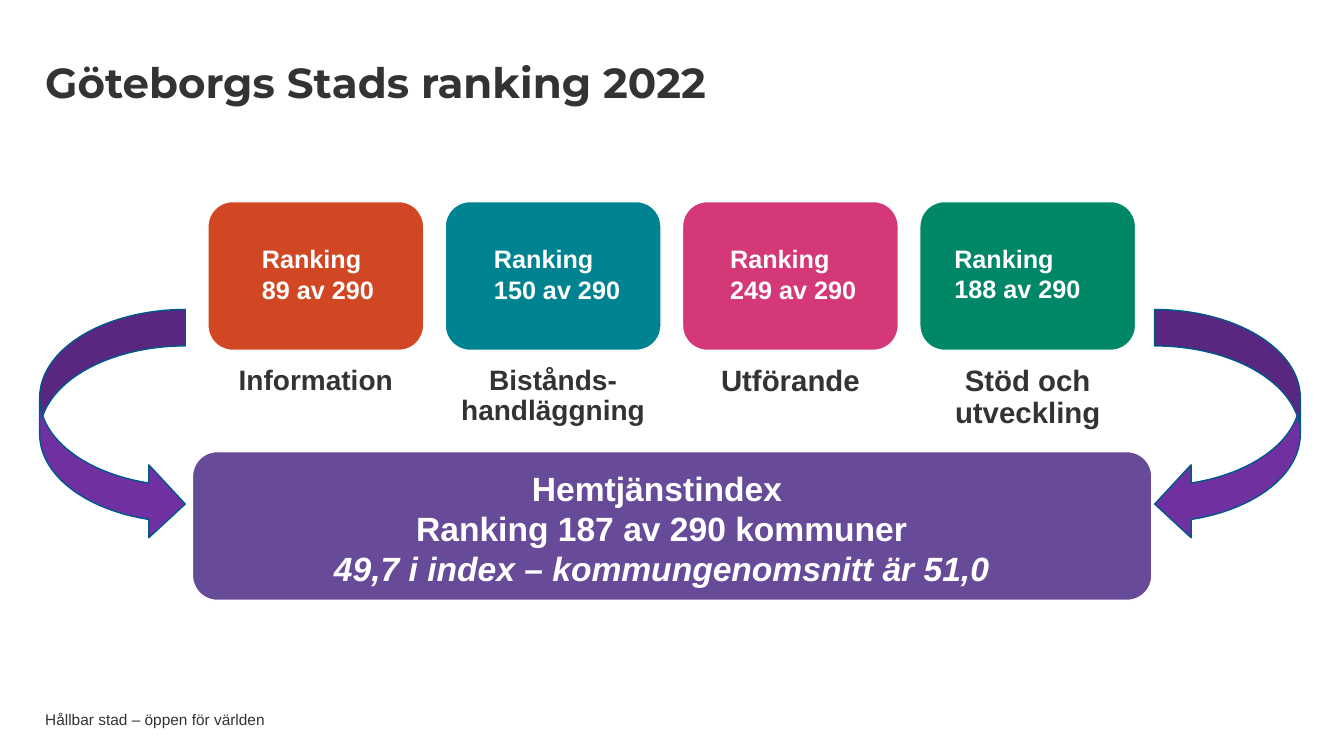
from dataclasses import dataclass

from pptx import Presentation
from pptx.dml.color import RGBColor
from pptx.enum.shapes import MSO_SHAPE
from pptx.enum.text import MSO_ANCHOR, PP_ALIGN
from pptx.util import Cm, Pt


@dataclass(frozen=True)
class Theme:
    heading_font: str = "Montserrat"
    body_font: str = "Arial"
    dark: str = "333333"
    white: str = "FFFFFF"
    index_fill: str = "674B99"
    arrow_fill: str = "7030A0"
    arrow_line: str = "00588B"
    title_size: int = 30
    index_size: int = 24
    ranking_size: int = 18
    footer_size: int = 11


THEME = Theme()

CARD_LEFT, CARD_TOP, CARD_STEP = 5.24, 5.08, 5.98
CARD_WIDTH, CARD_HEIGHT = 5.44, 3.75

# Label, label size, ranking, fill, then left, top and width of the ranking text
AREAS = [
    ("Information", 20, "89 av 290", "D24723", 6.35, 6.01, 3.4),
    ("Bistånds-handläggning", 20, "150 av 290", "008391", 12.2, 6.01, 3.99),
    ("Utförande", 21, "249 av 290", "D53878", 18.15, 6.01, 3.99),
    ("Stöd och utveckling", 21, "188 av 290", "008767", 23.8, 5.99, 4.32),
]


def add_filled_shape(slide, kind, left, top, width, height, fill, line):
    shape = slide.shapes.add_shape(kind, Cm(left), Cm(top), Cm(width), Cm(height))
    shape.shadow.inherit = False
    shape.fill.solid()
    shape.fill.fore_color.rgb = RGBColor.from_string(fill)
    shape.line.color.rgb = RGBColor.from_string(line)
    shape.line.width = Pt(1)


def add_text(slide, lines, left, top, width, height, size, color=THEME.dark,
             font=THEME.body_font, bold=True, align=PP_ALIGN.LEFT,
             anchor=MSO_ANCHOR.TOP, spacing=1.0, insets=(0.25, 0.13, 0.25, 0.13)):
    """Add one paragraph per line; insets run left, top, right, bottom in cm."""
    box = slide.shapes.add_textbox(Cm(left), Cm(top), Cm(width), Cm(height))
    frame = box.text_frame
    frame.word_wrap = True
    frame.vertical_anchor = anchor
    (frame.margin_left, frame.margin_top,
     frame.margin_right, frame.margin_bottom) = map(Cm, insets)
    frame.text = "\n".join(lines)
    for paragraph in frame.paragraphs:
        paragraph.alignment = align
        paragraph.line_spacing = spacing
        for run in paragraph.runs:
            run.font.name = font
            run.font.size = Pt(size)
            run.font.bold = bold
            run.font.color.rgb = RGBColor.from_string(color)
    return frame


def add_area(slide, position, area):
    """Add a coloured card with its ranking and the label below it."""
    label, label_size, ranking, fill, text_left, text_top, text_width = area
    left = CARD_LEFT + position * CARD_STEP
    add_filled_shape(slide, MSO_SHAPE.ROUNDED_RECTANGLE, left, CARD_TOP,
                     CARD_WIDTH, CARD_HEIGHT, fill, THEME.white)
    add_text(slide, [label], left, 8.82, CARD_WIDTH, 2.01, label_size,
             align=PP_ALIGN.CENTER, spacing=0.9, insets=(0.3, 0.41, 0.3, 0))
    add_text(slide, ["Ranking", ranking], text_left, text_top, text_width, 1.8,
             THEME.ranking_size, THEME.white)


def add_index(slide):
    add_filled_shape(slide, MSO_SHAPE.ROUNDED_RECTANGLE, 4.85, 11.38, 24.18,
                     CARD_HEIGHT, THEME.index_fill, THEME.white)
    lines = ["Hemtjänstindex ", "Ranking 187 av 290 kommuner",
             "49,7 i index – kommungenomsnitt är 51,0"]
    frame = add_text(slide, lines, 6.35, 11.65, 20.65, 3.33, THEME.index_size,
                     THEME.white, align=PP_ALIGN.CENTER)
    frame.paragraphs[-1].runs[0].font.italic = True


def main():
    presentation = Presentation()
    presentation.slide_width = Cm(33.87)
    presentation.slide_height = Cm(19.05)
    slide = presentation.slides.add_slide(presentation.slide_layouts[6])

    add_text(slide, ["Göteborgs Stads ranking 2022"], 1.14, 1.12, 25.48, 2.06,
             THEME.title_size, font=THEME.heading_font, anchor=MSO_ANCHOR.MIDDLE,
             spacing=0.9, insets=(0, 0.13, 0, 0.13))
    for position, area in enumerate(AREAS):
        add_area(slide, position, area)
    add_index(slide)
    for kind, left in ((MSO_SHAPE.CURVED_RIGHT_ARROW, 1),
                       (MSO_SHAPE.CURVED_LEFT_ARROW, 29.1)):
        add_filled_shape(slide, kind, left, 7.8, 3.67, 5.82,
                         THEME.arrow_fill, THEME.arrow_line)
    add_text(slide, ["Hållbar stad – öppen för världen"], 1.14, 17.93, 24, 0.41,
             THEME.footer_size, bold=False, anchor=MSO_ANCHOR.MIDDLE,
             insets=(0, 0, 0, 0))

    presentation.save("out.pptx")


if __name__ == "__main__":
    main()
